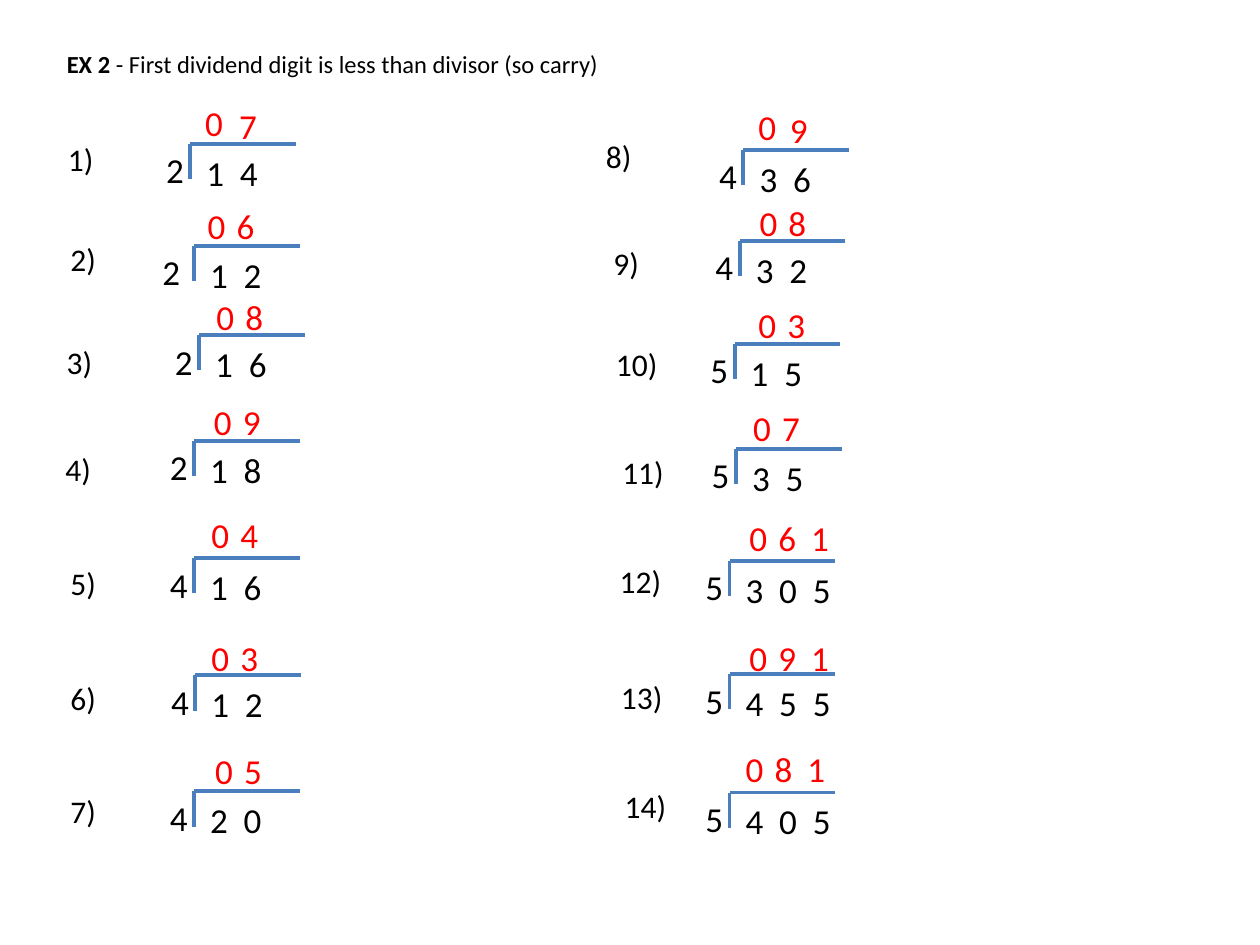
from pptx import Presentation
from pptx.dml.color import RGBColor
from pptx.enum.shapes import MSO_CONNECTOR
from pptx.enum.text import MSO_ANCHOR, MSO_AUTO_SIZE, PP_ALIGN
from pptx.oxml.ns import qn
from pptx.util import Inches, Pt
from lxml import etree

STRAIGHT = MSO_CONNECTOR.STRAIGHT
TOP = MSO_ANCHOR.TOP
FIT_SHAPE = MSO_AUTO_SIZE.SHAPE_TO_FIT_TEXT
LEFT = PP_ALIGN.LEFT

BLACK = RGBColor(0x00, 0x00, 0x00)
RED = RGBColor(0xFF, 0x00, 0x00)
BLUE = RGBColor(0x4B, 0x7E, 0xBC)
FONT = "Calibri"

TITLE = [("EX 2 ", True), ("- First dividend digit is less than divisor (so carry)", False)]

# divisor, dividend, quotient, then left and top of label, bracket corner, quotient
PROBLEMS = [
    ("2", "14", "07", (0.44, 1.06), (1.51, 1.14), (1.53, 0.76)),
    ("2", "12", "06", (0.46, 1.86), (1.54, 1.95), (1.55, 1.57)),
    ("2", "16", "08", (0.43, 2.67), (1.58, 2.66), (1.62, 2.30)),
    ("2", "18", "09", (0.42, 3.52), (1.54, 3.50), (1.60, 3.13)),
    ("4", "16", "04", (0.46, 4.43), (1.54, 4.43), (1.58, 4.03)),
    ("4", "12", "03", (0.46, 5.34), (1.55, 5.36), (1.58, 5.00)),
    ("4", "20", "05", (0.46, 6.24), (1.54, 6.28), (1.61, 5.90)),
    ("4", "36", "09", (4.71, 1.04), (5.90, 1.19), (5.92, 0.79)),
    ("4", "32", "08", (4.77, 1.89), (5.87, 1.91), (5.93, 1.55)),
    ("5", "15", "03", (4.79, 2.69), (5.83, 2.73), (5.92, 2.36)),
    ("5", "35", "07", (4.84, 3.55), (5.84, 3.56), (5.88, 3.18)),
    ("5", "305", "061", (4.82, 4.41), (5.79, 4.45), (5.85, 4.05)),
    ("5", "455", "091", (4.83, 5.33), (5.79, 5.35), (5.85, 5.00)),
    ("5", "405", "081", (4.86, 6.20), (5.79, 6.29), (5.82, 5.88)),
]

BAR_WIDTH, BAR_HEIGHT = 0.84, 0.28
DIGIT_WIDTH, DIGIT_HEIGHT = 0.34, 0.44
QUOTIENT_STEPS = [(0, 0), (0.23, 0), (0.49, 0)]
# Problems whose digits sit a little apart from the rule
SPECIAL_STEPS = {1: [(0, 0), (0.27, 0.02)], 8: [(0, 0), (0.25, 0.02)]}
DIVISOR_GAP = 0.29
SPECIAL_GAPS = {2: 0.35}


def write(shape, runs, size=20, color=BLACK, wrap=False):
    """Fill a shape with one paragraph of (text, bold) runs."""
    tf = shape.text_frame
    tf.word_wrap = wrap
    tf.auto_size = FIT_SHAPE
    tf.vertical_anchor = TOP
    p = tf.paragraphs[0]
    p.alignment = LEFT
    for text, bold in runs:
        r = p.add_run()
        r.text = text
        r.font.name = FONT
        r.font.size = Pt(size)
        r.font.bold = bold
        r.font.color.rgb = color


def add_text(shapes, text, x, y, w, h=DIGIT_HEIGHT, **style):
    box = shapes.add_textbox(Inches(x), Inches(y), Inches(w), Inches(h))
    write(box, [(text, False)], **style)


def add_line(shapes, x1, y1, x2, y2):
    line = shapes.add_connector(STRAIGHT, Inches(x1), Inches(y1), Inches(x2), Inches(y2))
    line.line.color.rgb = BLUE
    line.line.width = Pt(2.25)
    etree.SubElement(line.element.spPr, qn("a:effectLst"))


def add_division(s, number, divisor, dividend, x, y):
    shapes = s.shapes.add_group_shape().shapes
    add_line(shapes, x, y + BAR_HEIGHT, x, y)
    add_line(shapes, x + BAR_WIDTH, y, x, y)
    add_text(shapes, "  ".join(dividend), x + 0.03, y + 0.01, 0.07 + 0.27 * len(dividend))
    gap = SPECIAL_GAPS.get(number, DIVISOR_GAP)
    add_text(shapes, divisor, x - gap, y - 0.01, DIGIT_WIDTH)


def add_quotient(s, number, quotient, x, y):
    shapes = s.shapes.add_group_shape().shapes
    steps = SPECIAL_STEPS.get(number, QUOTIENT_STEPS)
    for digit, (dx, dy) in zip(quotient, steps):
        add_text(shapes, digit, x + dx, y + dy, DIGIT_WIDTH, color=RED)


def main():
    prs = Presentation()
    prs.slide_width, prs.slide_height = Inches(10), Inches(7.5)
    s = prs.slides.add_slide(prs.slide_layouts[5])

    title = s.shapes.title
    title.left, title.top = Inches(0.43), Inches(0.34)
    title.width, title.height = Inches(4.47), Inches(0.34)
    write(title, TITLE, size=14)

    for number, problem in enumerate(PROBLEMS, 1):
        divisor, dividend, quotient, label_at, bracket_at, quotient_at = problem
        label_width = 0.42 if number < 10 else 0.61
        add_text(s.shapes, f"{number})", *label_at, label_width, 0.4, size=18, wrap=True)
        add_division(s, number, divisor, dividend, *bracket_at)
        add_quotient(s, number, quotient, *quotient_at)

    prs.save("out.pptx")


if __name__ == "__main__":
    main()
